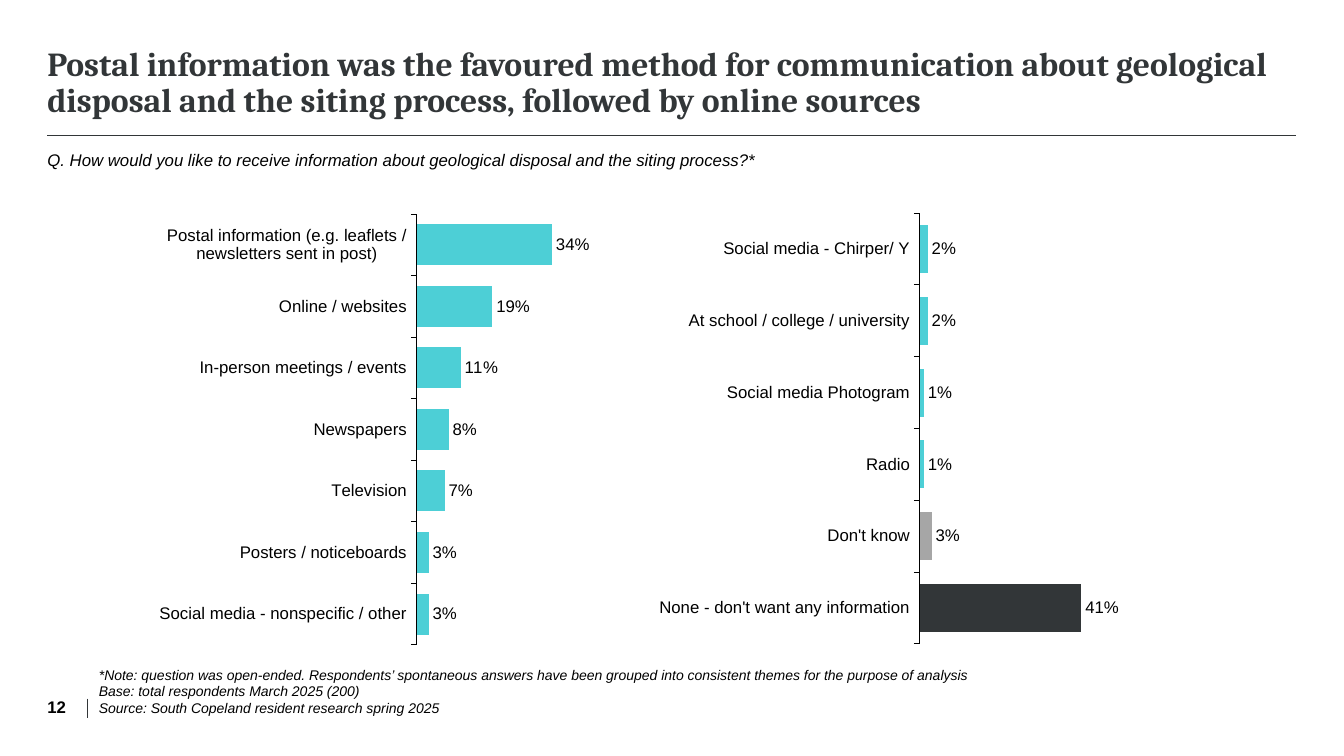
import pptx
import pptx.chart.data
import pptx.dml.color
import pptx.enum.chart
import pptx.enum.shapes
import pptx.enum.text
import pptx.oxml
import pptx.oxml.ns
import pptx.util
from dataclasses import dataclass

Pt = pptx.util.Pt
qn = pptx.oxml.ns.qn
ANCHOR = pptx.enum.text.MSO_ANCHOR

TITLE = ("Postal information was the favoured method for communication about geological "
         "disposal and the siting process, followed by online sources")
QUESTION = "Q. How would you like to receive information about geological disposal and the siting process?*"
NOTES = [
    "*Note: question was open-ended. Respondents’ spontaneous answers have been grouped "
    "into consistent themes for the purpose of analysis",
    "Base: total respondents March 2025 (200)",
    "Source: South Copeland resident research spring 2025",
]
PAGE = "12"


@dataclass(frozen=True)
class Theme:
    ink: str = "323638"
    text: str = "000000"
    bar: str = "4DCFD6"
    muted: str = "A6A6A6"
    heading_font: str = "Cambria"
    body_font: str = "Arial"
    title_size: int = 24
    body_size: int = 12
    note_size: int = 10


T = Theme()
CHARTS = [
    {
        "box": (64.8, 146.9, 455, 321.8),
        "plot": (0.512, 0.019, 0.437, 0.956),
        "answers": [
            ("Postal information (e.g. leaflets / newsletters sent in post)", 0.34),
            ("Online / websites", 0.19),
            ("In-person meetings / events", 0.11),
            ("Newspapers", 0.08),
            ("Television", 0.07),
            ("Posters / noticeboards", 0.03),
            ("Social media - nonspecific / other", 0.03),
        ],
        "highlights": {},
    },
    {
        "box": (430.6, 146.2, 435.6, 321.8),
        "plot": (0.52, 0.019, 0.452, 0.956),
        "answers": [
            ("Social media - Chirper/ Y", 0.02),
            ("At school / college / university", 0.02),
            ("Social media Photogram", 0.01),
            ("Radio", 0.01),
            ("Don't know", 0.03),
            ("None - don't want any information", 0.41),
        ],
        "highlights": {4: T.muted, 5: T.ink},
    },
]
LEFT = 33.8
RULES = [((LEFT, 96.5), (925.9, 96.5), 0.75), ((62.2, 499), (62.2, 512.6), 0.5)]


def rgb(value):
    return pptx.dml.color.RGBColor.from_string(value)


def style_font(font, size, color=T.text, name=T.body_font, bold=False, italic=False):
    font.size, font.name = Pt(size), name
    font.bold, font.italic = bold, italic
    font.color.rgb = rgb(color)


def fill_text(sp, lines, anchor, size, **style):
    tf = sp.text_frame
    tf.word_wrap = True
    tf.auto_size = pptx.enum.text.MSO_AUTO_SIZE.NONE
    tf.vertical_anchor = anchor
    tf.margin_left = tf.margin_right = tf.margin_top = tf.margin_bottom = 0
    tf.text = "\n".join(lines)
    for p in tf.paragraphs:
        p.alignment = pptx.enum.text.PP_ALIGN.LEFT
        style_font(p.font, size, **style)
    return tf.paragraphs[0]


def add_text(s, box, *args, **style):
    return fill_text(s.shapes.add_textbox(*map(Pt, box)), *args, **style)


def add_rule(s, start, end, width):
    line = s.shapes.add_connector(pptx.enum.shapes.MSO_CONNECTOR.STRAIGHT, *map(Pt, start + end))
    line.line.color.rgb = rgb(T.ink)
    line.line.width = Pt(width)
    line._element.spPr.append(pptx.oxml.parse_xml(
        '<a:effectLst xmlns:a="http://schemas.openxmlformats.org/drawingml/2006/main"/>'))


def place_plot(chart, plot):
    area = chart._chartSpace.find(".//" + qn("c:plotArea"))
    for old in area.findall(qn("c:layout")):
        area.remove(old)
    settings = [("layoutTarget", "inner"), ("xMode", "edge"), ("yMode", "edge"), *zip("xywh", plot)]
    items = "".join(f'<c:{tag} val="{value}"/>' for tag, value in settings)
    area.insert(0, pptx.oxml.parse_xml(
        '<c:layout xmlns:c="http://schemas.openxmlformats.org/drawingml/2006/chart">'
        f"<c:manualLayout>{items}</c:manualLayout></c:layout>"))


def add_bars(s, box, plot, answers, highlights):
    enum = pptx.enum.chart
    data = pptx.chart.data.CategoryChartData(number_format="0%")
    names, values = zip(*answers)
    data.categories = names
    data.add_series("Series 1", values)
    chart = s.shapes.add_chart(enum.XL_CHART_TYPE.BAR_CLUSTERED, *map(Pt, box), data).chart
    chart.has_legend = chart.has_title = False
    style_font(chart.font, T.note_size, T.ink)
    place_plot(chart, plot)

    axis = chart.category_axis
    axis.reverse_order = True
    axis.has_major_gridlines = False
    axis.major_tick_mark = enum.XL_TICK_MARK.OUTSIDE
    axis.minor_tick_mark = enum.XL_TICK_MARK.NONE
    axis.format.line.color.rgb = rgb(T.text)
    axis.format.line.width = Pt(0.75)
    style_font(axis.tick_labels.font, T.body_size)

    scale = chart.value_axis
    scale.minimum_scale, scale.maximum_scale = 0, 0.7
    scale.has_major_gridlines = False
    scale.visible = False

    bars = chart.plots[0]
    bars.gap_width = 50
    bars.vary_by_categories = False
    series = bars.series[0]
    series.format.fill.solid()
    series.format.fill.fore_color.rgb = rgb(T.bar)
    for index, color in highlights.items():
        fill = series.points[index].format.fill
        fill.solid()
        fill.fore_color.rgb = rgb(color)
    labels = series.data_labels
    labels.show_value = True
    labels.position = enum.XL_LABEL_POSITION.OUTSIDE_END
    labels.number_format, labels.number_format_is_linked = "0%", False
    style_font(labels.font, T.body_size)


def main():
    prs = pptx.Presentation()
    prs.slide_width, prs.slide_height = Pt(960), Pt(540)
    s = prs.slides.add_slide(prs.slide_layouts[5])

    title = s.shapes.title
    title.left, title.top, title.width, title.height = map(Pt, (LEFT, 46.8, 899.3, 38.9))
    p = fill_text(title, [TITLE], ANCHOR.BOTTOM, T.title_size,
                  color=T.ink, name=T.heading_font, bold=True)
    p.line_spacing = 0.9

    for rule in RULES:
        add_rule(s, *rule)
    for chart in CHARTS:
        add_bars(s, **chart)

    p = add_text(s, (LEFT, 105.1, 865.4, 25.9), [QUESTION], ANCHOR.TOP, T.body_size, italic=True)
    p.line_spacing, p.space_after = 1.13, Pt(10)
    add_text(s, (LEFT, 486, 22.3, 25.9), [PAGE], ANCHOR.BOTTOM, T.body_size, bold=True)
    add_text(s, (70.6, 486, 757.4, 25.9), NOTES, ANCHOR.BOTTOM, T.note_size, italic=True)

    prs.save("out.pptx")


if __name__ == "__main__":
    main()
